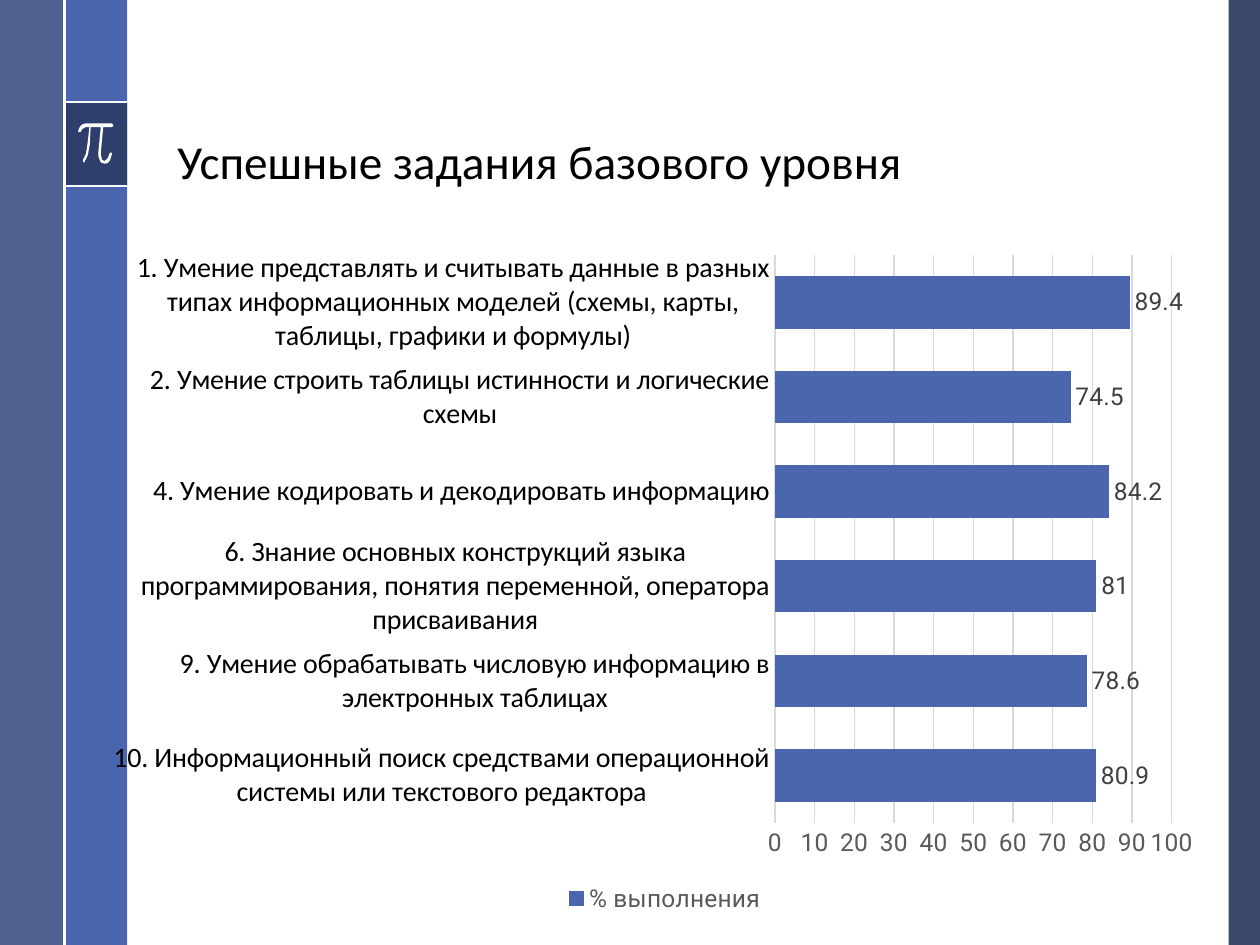
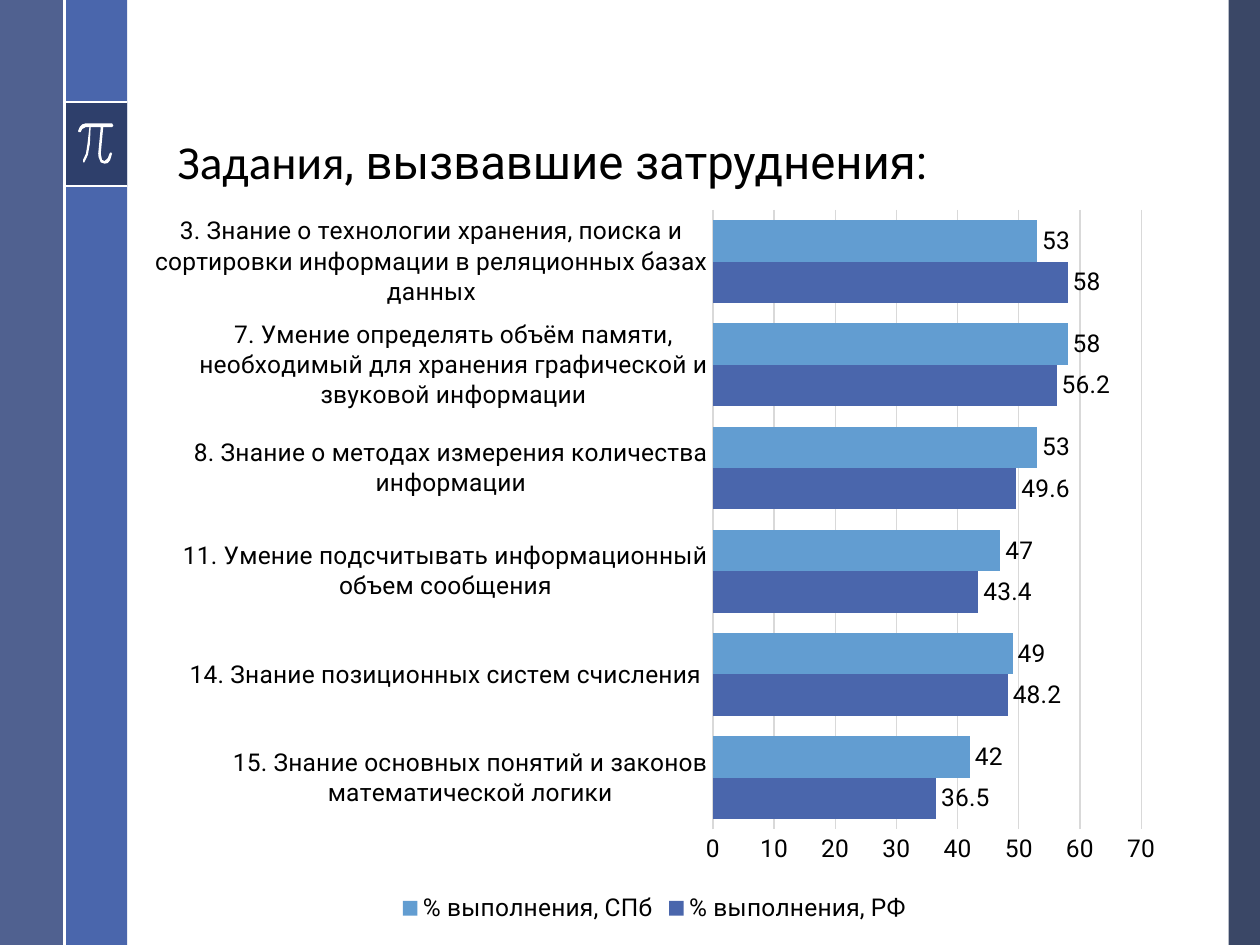
from dataclasses import dataclass

from lxml.etree import SubElement
from pptx import Presentation
from pptx.chart.data import CategoryChartData as ChartData
from pptx.dml.color import RGBColor as Rgb
from pptx.enum.chart import XL_CHART_TYPE as Kind
from pptx.enum.chart import XL_LABEL_POSITION as Spot
from pptx.enum.chart import XL_LEGEND_POSITION as Side
from pptx.enum.chart import XL_TICK_MARK as Tick
from pptx.enum.shapes import MSO_CONNECTOR as Link
from pptx.enum.shapes import MSO_SHAPE as Form
from pptx.enum.text import MSO_ANCHOR as Anchor
from pptx.oxml import parse_xml
from pptx.oxml.ns import nsdecls, qn
from pptx.util import Pt


# Theme
@dataclass(frozen=True)
class Theme:
    white: str = "FFFFFF"
    black: str = "000000"
    blue: str = "4A66AC"
    sky: str = "629DD1"
    navy: str = "253356"
    slate: str = "384C81"
    gray: str = "595959"
    dark: str = "404040"
    grid: str = "D9D9D9"
    head: str = "Calibri"
    body: str = "Roboto"
    title: float = 27
    large: float = 16
    small: float = 14
    rule: float = 1.5
    hair: float = 0.75


T = Theme()
WIDE, HIGH = 720, 540


@dataclass(frozen=True)
class Box:
    x: float
    y: float
    w: float
    h: float

    def place(self) -> tuple:
        return Pt(self.x), Pt(self.y), Pt(self.w), Pt(self.h)


@dataclass(frozen=True)
class Band:
    box: Box
    color: str
    alpha: int = 100


@dataclass(frozen=True)
class Rule:
    x1: float
    y1: float
    x2: float
    y2: float


@dataclass(frozen=True)
class Style:
    size: float
    color: str
    face: str


@dataclass(frozen=True)
class Series:
    name: str
    color: str
    vals: tuple


@dataclass(frozen=True)
class Bars:
    box: Box
    plot: Box  # shares of the chart area
    gap: int
    top: int
    cat: Style
    val: Style
    key: Style
    label: Style
    names: tuple
    series: tuple


@dataclass(frozen=True)
class Page:
    title: tuple  # (text, font) pairs
    bars: Bars


# Side bands and rules
EDGE, STRIP = 36.7, 36
SIGN = Box(EDGE, 58.3, STRIP, 47.9)
BANDS = (
    Band(Box(702, 0, 18, HIGH), T.navy, 90),
    Band(Box(EDGE, 0, STRIP, HIGH), T.blue),
    Band(Box(0, 0, 36, HIGH), T.slate, 88),
    Band(SIGN, T.navy, 75),
)
RULES = tuple(Rule(EDGE, y, EDGE + STRIP, y) for y in (SIGN.y, SIGN.y + SIGN.h))
RULES += (Rule(EDGE, 0, EDGE, HIGH),)

# Outline of the pi sign, in units of 0.072 pt
UNIT = 0.072
PI_SIGN = (
    (890, 980), (680, 980), (654, 988), (635, 1006), (620, 1040), (625, 1050),
    (640, 1050), (653, 1025), (680, 1010), (710, 1010), (704, 1060), (696, 1136),
    (683, 1220), (660, 1270), (660, 1290), (670, 1290), (698, 1230), (714, 1142),
    (720, 1010), (800, 1010), (780, 1220), (783, 1248), (800, 1290), (830, 1300),
    (854, 1296), (874, 1274), (890, 1220), (880, 1210), (870, 1220), (856, 1256),
    (830, 1280), (810, 1270), (800, 1220), (820, 1010), (890, 1010), (900, 1000),
)

# Content
SMALL = Style(T.small, T.black, T.body)
SOFT = Style(T.small, T.gray, T.body)
PAGES = (
    Page(
        (("Успешные задания базового уровня", T.head),),
        Bars(
            Box(64.8, 134, 630, 391), Box(0.6, 0.03, 0.36, 0.83), 80, 100,
            Style(T.large, T.black, T.head), SOFT, SOFT,
            Style(T.small, T.dark, T.body),
            (
                "10. Информационный поиск средствами операционной системы "
                "или текстового редактора",
                "9. Умение обрабатывать числовую информацию в электронных таблицах",
                "6. Знание основных конструкций языка программирования, "
                "понятия переменной, оператора присваивания",
                "4. Умение кодировать и декодировать информацию",
                "2. Умение строить таблицы истинности и логические схемы",
                "1. Умение представлять и считывать данные в разных типах "
                "информационных моделей (схемы, карты, таблицы, графики и формулы)",
            ),
            (Series("% выполнения", T.blue, (80.9, 78.6, 81, 84.2, 74.5, 89.4)),),
        ),
    ),
    Page(
        (("Задания", T.head), (", вызвавшие затруднения:", T.body)),
        Bars(
            Box(76.3, 111.6, 595.5, 419), Box(0.556, 0.02, 0.411, 0.845), 50, 70,
            SMALL, SMALL, SMALL, SMALL,
            (
                "15. Знание основных понятий и законов математической логики",
                "14. Знание позиционных систем счисления ",
                "11. Умение подсчитывать информационный объем сообщения",
                "8. Знание о методах измерения количества информации",
                "7. Умение определять объём памяти, необходимый для хранения "
                "графической и звуковой информации",
                "3. Знание о технологии хранения, поиска и сортировки "
                "информации в реляционных базах данных",
            ),
            (
                Series("% выполнения, РФ", T.blue, (36.5, 48.2, 43.4, 49.6, 56.2, 58)),
                Series("% выполнения, СПб", T.sky, (42, 49, 47, 53, 58, 53)),
            ),
        ),
    ),
)


# Drawing helpers
def paint(fill, color: str) -> None:
    fill.solid()
    fill.fore_color.rgb = Rgb.from_string(color)


def set_font(font, style: Style) -> None:
    font.size = Pt(style.size)
    font.name = style.face
    font.bold = False
    font.color.rgb = Rgb.from_string(style.color)


def set_line(line, color: str, width: float) -> None:
    line.color.rgb = Rgb.from_string(color)
    line.width = Pt(width)


def coat(shape, color: str) -> None:
    shape.shadow.inherit = False
    paint(shape.fill, color)
    shape.line.fill.background()


def draw_band(slide, band: Band) -> None:
    shape = slide.shapes.add_shape(Form.RECTANGLE, *band.box.place())
    coat(shape, band.color)
    if band.alpha < 100:
        tone = shape.element.spPr.find(qn("a:solidFill")).find(qn("a:srgbClr"))
        SubElement(tone, qn("a:alpha")).set("val", str(band.alpha * 1000))


def draw_rule(slide, rule: Rule) -> None:
    ends = (Pt(n) for n in (rule.x1, rule.y1, rule.x2, rule.y2))
    link = slide.shapes.add_connector(Link.STRAIGHT, *ends)
    set_line(link.line, T.white, T.rule)
    SubElement(link.element.spPr, qn("a:effectLst"))


def draw_sign(slide) -> None:
    pen = slide.shapes.build_freeform(*PI_SIGN[0], scale=Pt(UNIT))
    pen.add_line_segments(PI_SIGN[1:], close=True)
    coat(pen.convert_to_shape(), T.white)


def draw_frame(slide) -> None:
    for band in BANDS:
        draw_band(slide, band)
    for rule in RULES:
        draw_rule(slide, rule)
    draw_sign(slide)


def draw_title(slide, parts: tuple) -> None:
    frame = slide.shapes.add_textbox(*Box(94.3, 13.7, 578, 98).place()).text_frame
    frame.word_wrap = True
    frame.vertical_anchor = Anchor.BOTTOM
    para = frame.paragraphs[0]
    para.line_spacing = 0.9
    for text, face in parts:
        run = para.add_run()
        run.text = text
        set_font(run.font, Style(T.title, T.black, face))


def fix_plot(chart, plot: Box) -> None:
    area = chart.element.find(qn("c:chart")).find(qn("c:plotArea"))
    for old in area.findall(qn("c:layout")):
        area.remove(old)
    sizes = "".join(f'<c:{k} val="{getattr(plot, k)}"/>' for k in "xywh")
    area.insert(0, parse_xml(
        f'<c:layout {nsdecls("c")}><c:manualLayout><c:layoutTarget val="inner"/>'
        f'<c:xMode val="edge"/><c:yMode val="edge"/>{sizes}'
        "</c:manualLayout></c:layout>"
    ))


def draw_bars(slide, bars: Bars) -> None:
    data = ChartData()
    data.categories = bars.names
    for item in bars.series:
        data.add_series(item.name, item.vals)
    chart = slide.shapes.add_chart(
        Kind.BAR_CLUSTERED, *bars.box.place(), data).chart
    set_font(chart.font, SMALL)
    chart.has_title = False
    fix_plot(chart, bars.plot)

    # Axes
    cat, val = chart.category_axis, chart.value_axis
    for axis, style in ((cat, bars.cat), (val, bars.val)):
        axis.major_tick_mark = axis.minor_tick_mark = Tick.NONE
        set_font(axis.tick_labels.font, style)
    set_line(cat.format.line, T.grid, T.hair)
    val.format.line.fill.background()
    val.has_major_gridlines = True
    set_line(val.major_gridlines.format.line, T.grid, T.hair)
    val.minimum_scale, val.maximum_scale, val.major_unit = 0, bars.top, 10

    # Bars and labels
    plot = chart.plots[0]
    plot.vary_by_categories = False
    plot.gap_width, plot.overlap = bars.gap, 0
    for row, item in zip(plot.series, bars.series):
        paint(row.format.fill, item.color)
        row.invert_if_negative = False
        tags = row.data_labels
        tags.show_value = True
        tags.position = Spot.OUTSIDE_END
        set_font(tags.font, bars.label)

    # Legend
    chart.has_legend = True
    chart.legend.position = Side.BOTTOM
    chart.legend.include_in_layout = False
    set_font(chart.legend.font, bars.key)


def main() -> None:
    deck = Presentation()
    deck.slide_width, deck.slide_height = Pt(WIDE), Pt(HIGH)
    for page in PAGES:
        slide = deck.slides.add_slide(deck.slide_layouts[6])
        draw_frame(slide)
        draw_title(slide, page.title)
        draw_bars(slide, page.bars)
    deck.save("out.pptx")


if __name__ == "__main__":
    main()
